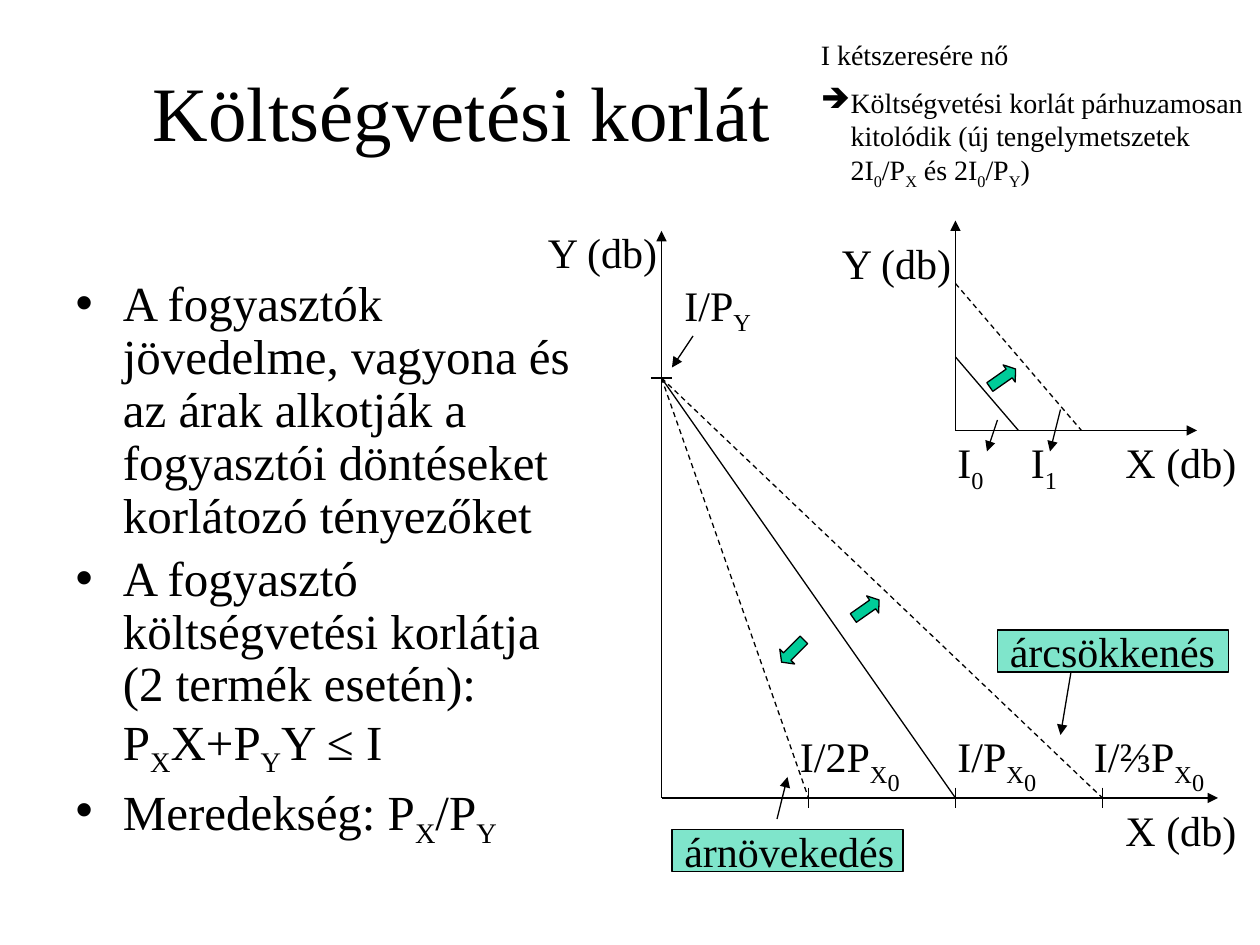
from dataclasses import dataclass

from lxml import etree
from pptx import Presentation
from pptx.dml.color import RGBColor
from pptx.enum.dml import MSO_LINE
from pptx.enum.shapes import MSO_CONNECTOR, MSO_SHAPE
from pptx.enum.text import MSO_ANCHOR, MSO_AUTO_SIZE, PP_ALIGN
from pptx.oxml.ns import qn
from pptx.util import Pt

DASH = MSO_LINE.DASH
STRAIGHT = MSO_CONNECTOR.STRAIGHT
RECTANGLE, RIGHT_ARROW = MSO_SHAPE.RECTANGLE, MSO_SHAPE.RIGHT_ARROW
MIDDLE, TOP = MSO_ANCHOR.MIDDLE, MSO_ANCHOR.TOP
NO_FIT = MSO_AUTO_SIZE.NONE
CENTER = PP_ALIGN.CENTER

FONT = "Times New Roman"
BLACK, GREEN = "000000", "00CC99"
SUBSCRIPTS = ("-25000", "-45000")


@dataclass
class Box:
    left: float
    top: float
    width: float
    height: float

    def inner(self, left, top, width, height):
        """Box whose position is measured from this box's corner."""
        return Box(self.left + left, self.top + top, width, height)

    def lengths(self):
        return [Pt(n) for n in (self.left, self.top, self.width, self.height)]


def color(value):
    return RGBColor.from_string(value)


def write(para, text, size):
    """Text between bars is subscript; a comma in it starts a lower level."""
    para.font.size, para.font.name = Pt(size), FONT
    para.font.color.rgb = color(BLACK)
    for index, piece in enumerate(text.split("|")):
        if index % 2 == 0:
            if piece:
                para.add_run().text = piece
            continue
        for part, baseline in zip(piece.split(","), SUBSCRIPTS):
            span = para.add_run()
            span.text = part
            span._r.get_or_add_rPr().set("baseline", baseline)


def set_bullet(para, symbol, indent):
    properties = para._p.get_or_add_pPr()
    properties.set("marL", str(Pt(indent)))
    properties.set("indent", str(Pt(-indent)))
    etree.SubElement(properties, qn("a:buChar")).set("char", symbol)


def place(shape, box):
    shape.left, shape.top, shape.width, shape.height = box.lengths()


def add_text(page, box, text, size=24):
    frame = page.shapes.add_textbox(*box.lengths()).text_frame
    frame.word_wrap = True
    write(frame.paragraphs[0], text, size)
    return frame


def add_line(page, box, start, end, arrow=False, dashed=False):
    """Line between two points measured from the box's corner."""
    ends = [Pt(n) for x, y in (start, end) for n in (box.left + x, box.top + y)]
    line = page.shapes.add_connector(STRAIGHT, *ends)
    line.line.width = Pt(0.75)
    line.line.color.rgb = color(BLACK)
    if dashed:
        line.line.dash_style = DASH
    if arrow:
        outline = line.line._get_or_add_ln()
        etree.SubElement(outline, qn("a:tailEnd")).set("type", "triangle")
    etree.SubElement(line._element.spPr, qn("a:effectLst"))


def add_filled(page, kind, box):
    shape = page.shapes.add_shape(kind, *box.lengths())
    shape.shadow.inherit = False
    shape.fill.solid()
    shape.fill.fore_color.rgb = color(GREEN)
    shape.line.color.rgb = color(BLACK)
    shape.line.width = Pt(0.75)
    return shape


def add_shift_arrow(page, box, rotation):
    arrow = add_filled(page, RIGHT_ARROW, box)
    arrow.adjustments[0], arrow.adjustments[1] = 0.5, 0.375
    arrow.rotation = rotation


def add_tag(page, box, text):
    """Label on a half-transparent band."""
    band = add_filled(page, RECTANGLE, box)
    tint = band._element.spPr.find(qn("a:solidFill"))[0]
    etree.SubElement(tint, qn("a:alpha")).set("val", "50000")
    add_text(page, box.inner(0, -6, 150, 36), text)


def add_axes(page, box, origin, top, right):
    x, y = origin
    add_line(page, box, origin, (x, top), arrow=True)
    add_line(page, box, origin, (right, y), arrow=True)
    add_text(page, box.inner(box.width - 84, y, 84, 36), "X (db)")


def add_title(page, box):
    title = page.shapes.title
    place(title, box)
    title.text_frame.vertical_anchor = MIDDLE
    para = title.text_frame.paragraphs[0]
    para.alignment = CENTER
    write(para, "Költségvetési korlát", 44)


def add_list(page, box, items):
    body = page.placeholders[1]
    place(body, box)
    frame = body.text_frame
    frame.auto_size, frame.vertical_anchor = NO_FIT, TOP
    for index, item in enumerate(items):
        para = frame.add_paragraph() if index else frame.paragraphs[0]
        para.line_spacing = 0.9
        set_bullet(para, "•", 27)
        write(para, item, 28)


def add_income_note(page, box):
    frame = add_text(page, box, "I kétszeresére nő", 16)
    para = frame.add_paragraph()
    para.space_before = Pt(8)
    set_bullet(para, "➔", 17)
    write(para, "Költségvetési korlát párhuzamosan kitolódik "
          "(új tengelymetszetek 2I|0|/P|X| és 2I|0|/P|Y|)", 16)


def add_price_diagram(page, box):
    origin_x, origin_y = origin = (72, 330)
    intercept = (origin_x, 90)
    add_axes(page, box, origin, 6, 390)
    add_text(page, box.inner(0, 0, 78, 36), "Y (db)")
    add_line(page, box, (66, 90), (78, 90))
    add_text(page, box.inner(78, 30, 120, 36), "I/P|Y|")
    add_line(page, box, (90, 66), (78, 84), arrow=True)

    budgets = [("I/2P|X,0|", 144, True), ("I/P|X,0|", 234, False),
               ("I/⅔P|X,0|", 312, True)]
    for step, (label, label_left, dashed) in enumerate(budgets, 1):
        x = origin_x + 84 * step
        add_line(page, box, intercept, (x, origin_y), dashed=dashed)
        add_line(page, box, (x, origin_y - 6), (x, origin_y + 6))
        add_text(page, box.inner(label_left, 288, 120, 36), label)

    add_tag(page, box.inner(78, 348, 132, 24), "árnövekedés")
    add_line(page, box, (138, 342), (144, 318), arrow=True)
    add_tag(page, box.inner(264, 234, 132, 24), "árcsökkenés")
    add_line(page, box, (306, 258), (300, 294), arrow=True)
    add_shift_arrow(page, box.inner(180, 216, 18, 12), 325)
    add_shift_arrow(page, box.inner(138, 240, 18, 12), 135)


def add_income_diagram(page, box):
    origin_x, origin_y = origin = (72, 120)
    add_axes(page, box, origin, 0, 210)
    add_text(page, box.inner(0, 6, 78, 36), "Y (db)")
    add_line(page, box, (origin_x, 78), (108, origin_y))
    add_line(page, box, (origin_x, 36), (144, origin_y), dashed=True)
    add_text(page, box.inner(66, origin_y, 78, 36), "I|0|")
    add_text(page, box.inner(108, origin_y, 78, 36), "I|1|")
    add_line(page, box, (96, 114), (90, 132), arrow=True)
    add_line(page, box, (132, 108), (126, 132), arrow=True)
    add_shift_arrow(page, box.inner(90, 84, 18, 12), 325)


def main():
    deck = Presentation()
    deck.slide_width, deck.slide_height = Pt(720), Pt(540)
    page = deck.slides.add_slide(deck.slide_layouts[1])
    add_title(page, Box(-42, 18, 612, 90))
    add_list(page, Box(36, 156, 300, 342), [
        "A fogyasztók jövedelme, vagyona és az árak alkotják "
        "a fogyasztói döntéseket korlátozó tényezőket",
        "A fogyasztó költségvetési korlátja (2 termék esetén): "
        "P|X|X+P|Y|Y ≤ I",
        "Meredekség: P|X|/P|Y|",
    ])
    add_price_diagram(page, Box(306, 126, 414, 378))
    add_income_diagram(page, Box(474, 126, 246, 156))
    add_income_note(page, Box(462, 18, 258, 94))
    deck.save("out.pptx")


if __name__ == "__main__":
    main()
